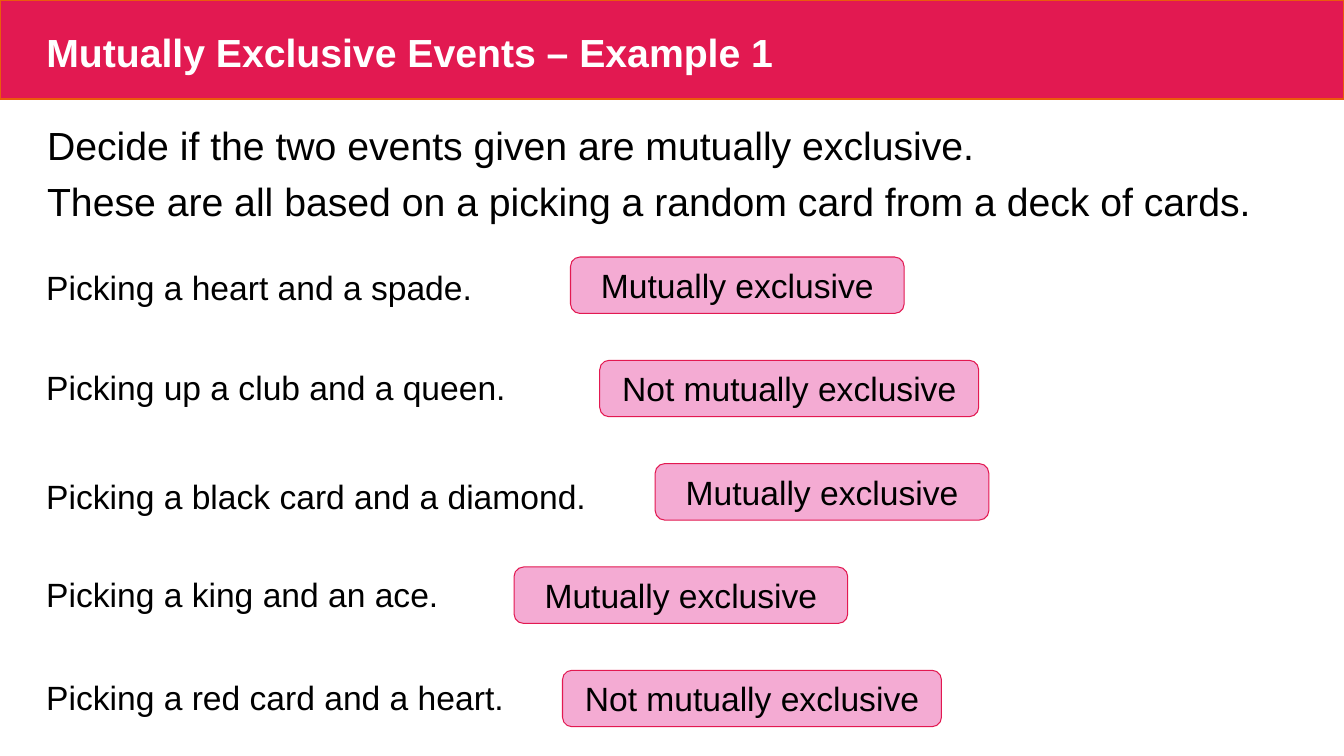
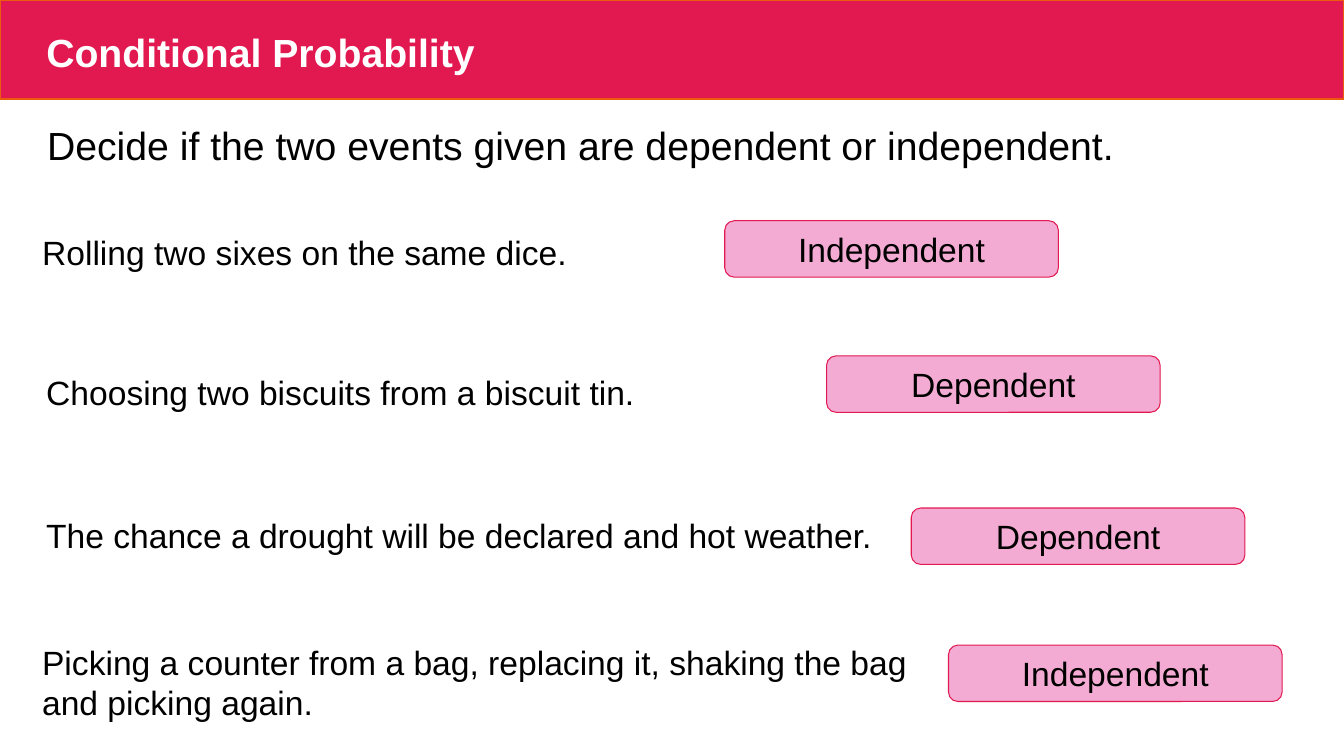
"""Builds two probability slides that pair each event with its answer."""
import pptx
import pptx.dml.color
import pptx.enum.shapes
import pptx.enum.text
import pptx.util

Pt = pptx.util.Pt
CRIMSON, ORANGE, PINK = "E21951", "EA5B0C", "F4ABD3"
WHITE, BLACK = "FFFFFF", "000000"
SHAPES = pptx.enum.shapes.MSO_SHAPE
ALIGN = pptx.enum.text.PP_ALIGN
SLIDE_WIDTH = 960
ANSWER_HEIGHT = 40.3
ANSWER_WIDTH, WIDE_ANSWER_WIDTH = 238.3, 270.7
ANSWER_TOP, ANSWER_STEP = 183.6, 73.8


def rgb(colour):
    return pptx.dml.color.RGBColor.from_string(colour)


def write(shape, text, size, colour=BLACK, bold=False, align=ALIGN.LEFT):
    shape.text_frame.text = text
    shape.text_frame.word_wrap = True
    for paragraph in shape.text_frame.paragraphs:
        paragraph.alignment = align
        for run in paragraph.runs:
            run.font.name = "Arial"
            run.font.size = Pt(size)
            run.font.bold = bold
            run.font.color.rgb = rgb(colour)


exclusive_events = [
    ("Picking a heart and a spade.", 187.2, 383, "Mutually exclusive", 407.5),
    ("Picking up a club and a queen.", 258.5, 383, "Not mutually exclusive", 428.4),
    ("Picking a black card and a diamond.", 336.2, 468, "Mutually exclusive", 468),
    ("Picking a king and an ace.", 406.1, 345, "Mutually exclusive", 367.2),
    ("Picking a red card and a heart.", 480.2, 428.4, "Not mutually exclusive", 401.8),
]
topics = [
    (
        "Mutually Exclusive Events – Example 1",
        "Decide if the two events given are mutually exclusive.\n"
        "These are all based on a picking a random card from a deck of cards.",
        [
            (event, 25.9, top, width, answer, left, ANSWER_TOP + row * ANSWER_STEP)
            for row, (event, top, width, answer, left) in enumerate(exclusive_events)
        ],
    ),
    (
        "Conditional Probability",
        "Decide if the two events given are dependent or independent.",
        [
            ("Rolling two sixes on the same dice.", 23, 162, 555, "Independent", 517.7, 157.7),
            ("Choosing two biscuits from a biscuit tin.", 25.9, 262.1, 503.3, "Dependent", 590.4, 254.2),
            ("The chance a drought will be declared and hot weather.", 25.9, 364.3, 674.6, "Dependent", 650.9, 362.9),
            (
                "Picking a counter from a bag, replacing it, shaking the bag and picking again.",
                23, 455, 638, "Independent", 677.5, 460.8,
            ),
        ],
    ),
]

deck = pptx.Presentation()
deck.slide_width, deck.slide_height = Pt(SLIDE_WIDTH), Pt(540)
title_only = deck.slide_layouts.get_by_name("Title Only")

for number, (heading, instructions, events) in enumerate(topics):
    slide = deck.slides.add_slide(title_only)
    if number == 0:
        band = slide.shapes.add_shape(SHAPES.RECTANGLE, 0, 0, Pt(SLIDE_WIDTH), Pt(70.6))
        band.shadow.inherit = False
        band.fill.solid()
        band.fill.fore_color.rgb = rgb(CRIMSON)
        band.line.color.rgb = rgb(ORANGE)
        band.line.width = Pt(1)
        title_only.shapes.element.insert(2, band.element)

    title = slide.shapes.title
    title.left, title.top, title.width, title.height = Pt(25.9), Pt(13.7), Pt(907.2), Pt(43.9)
    write(title, heading, 28, WHITE, bold=True)
    title.text_frame.auto_size = pptx.enum.text.MSO_AUTO_SIZE.NONE
    title.text_frame.vertical_anchor = pptx.enum.text.MSO_ANCHOR.BOTTOM
    title.text_frame.paragraphs[0].line_spacing = 0.9

    prompt = slide.shapes.add_textbox(Pt(26.6), Pt(82.8), Pt(919.4), Pt(80))
    write(prompt, instructions, 28)
    for paragraph in prompt.text_frame.paragraphs:
        paragraph.space_after = Pt(7)

    for event, event_left, event_top, event_width, answer, answer_left, answer_top in events:
        statement = slide.shapes.add_textbox(Pt(event_left), Pt(event_top), Pt(event_width), Pt(36))
        write(statement, event, 24)

        answer_width = WIDE_ANSWER_WIDTH if answer.startswith("Not") else ANSWER_WIDTH
        verdict = slide.shapes.add_shape(
            SHAPES.ROUNDED_RECTANGLE, Pt(answer_left), Pt(answer_top), Pt(answer_width), Pt(ANSWER_HEIGHT)
        )
        verdict.shadow.inherit = False
        verdict.fill.solid()
        verdict.fill.fore_color.rgb = rgb(PINK)
        verdict.line.color.rgb = rgb(CRIMSON)
        verdict.line.width = Pt(0.75)
        write(verdict, answer, 24, align=ALIGN.CENTER)

deck.save("out.pptx")
